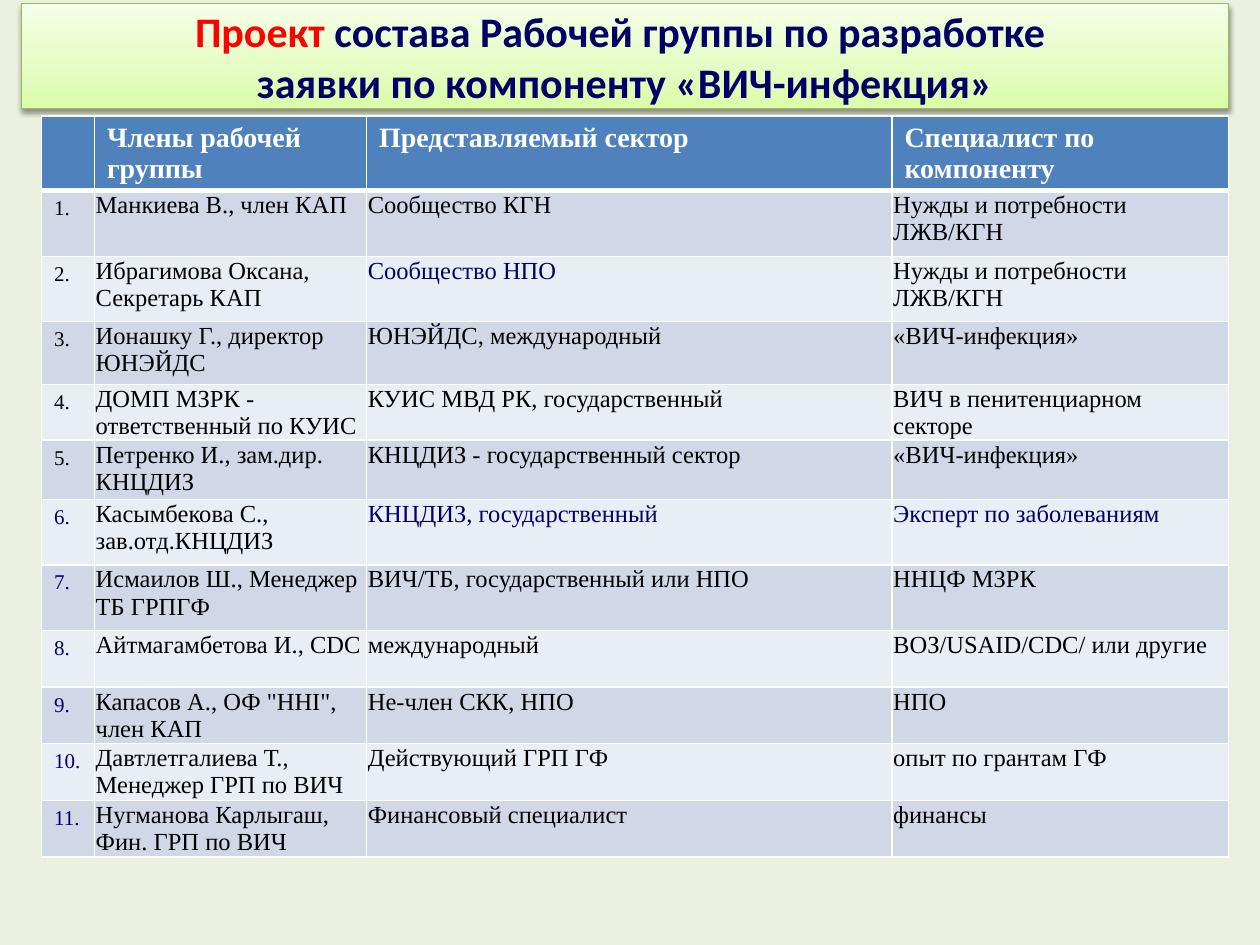
from dataclasses import dataclass

from lxml import etree
from pptx import Presentation, util as u
from pptx.dml.color import RGBColor
from pptx.enum import text
from pptx.oxml import parse_xml


@dataclass(frozen=True)
class Theme:
    heading_font: str = "Calibri"
    body_font: str = "Times New Roman"
    title_size: int = 24
    header_size: int = 16
    body_size: int = 14
    number_size: int = 12
    page: str = "EBF1DE"
    navy: str = "000066"
    red: str = "FF0000"
    black: str = "000000"
    white: str = "FFFFFF"
    header_fill: str = "4F81BD"
    bands: tuple = ("D0D8E8", "E9EDF4")
    title_line: str = "98B955"
    title_stops: tuple = ((0, "DAFDA7"), (35, "E4FCC2"), (100, "F5FFE7"))


THEME = Theme()
DRAWING = "http://schemas.openxmlformats.org/drawingml/2006/main"

TITLE_LINES = [
    [("Проект", THEME.red), (" состава Рабочей группы по разработке ", THEME.navy)],
    [("заявки по компоненту «ВИЧ-инфекция»", THEME.navy)],
]
HEADERS = ["", "Члены рабочей группы", "Представляемый сектор", "Специалист по компоненту"]
MEMBERS = [
    ("Манкиева В., член КАП", "Сообщество КГН", "Нужды и потребности ЛЖВ/КГН"),
    ("Ибрагимова Оксана, Секретарь КАП", "Сообщество НПО", "Нужды и потребности ЛЖВ/КГН"),
    ("Ионашку Г., директор ЮНЭЙДС", "ЮНЭЙДС, международный", "«ВИЧ-инфекция»"),
    ("ДОМП МЗРК - ответственный по КУИС", "КУИС МВД РК, государственный",
     "ВИЧ в пенитенциарном секторе"),
    ("Петренко И., зам.дир. КНЦДИЗ", "КНЦДИЗ - государственный сектор", "«ВИЧ-инфекция»"),
    ("Касымбекова С., зав.отд.КНЦДИЗ", "КНЦДИЗ, государственный", "Эксперт по заболеваниям"),
    ("Исмаилов Ш., Менеджер ТБ ГРПГФ", "ВИЧ/ТБ, государственный или НПО", "ННЦФ МЗРК"),
    ("Айтмагамбетова И., CDC", "международный", "ВОЗ/USAID/CDC/ или другие"),
    ("Капасов А., ОФ \"HHI\", член КАП", "Не-член СКК, НПО", "НПО"),
    ("Давтлетгалиева Т., Менеджер ГРП по ВИЧ", "Действующий ГРП ГФ", "опыт по грантам ГФ"),
    ("Нугманова Карлыгаш, Фин. ГРП по ВИЧ", "Финансовый специалист", "финансы"),
]
NAVY_CELLS = {(2, 2), (6, 2), (6, 3)} | {(row, 0) for row in range(6, len(MEMBERS) + 1)}

COLUMNS = [0.42, 2.16, 4.17, 2.67]
ROWS = [0.59, 0.52, 0.52, 0.5, 0.43, 0.47, 0.52, 0.52] + [0.45] * 4
TITLE_BOX = (0.17, 0.03, 9.58, 0.83)
TABLE_CORNER = (0.33, 0.92)
WIDE_INSETS = (0.1, 0.05, 0.1, 0.05)
TIGHT_INSETS = (0.01, 0.01, 0.01, 0)


def write(paragraph, words, *, size, color, font=THEME.body_font, bold=False):
    run = paragraph.add_run()
    run.text = words
    run.font.name = font
    run.font.size = u.Pt(size)
    run.font.bold = bold
    run.font.color.rgb = RGBColor.from_string(color)


def add_title(slide):
    title = slide.shapes.title
    title.left, title.top, title.width, title.height = map(u.Inches, TITLE_BOX)
    stops = "".join(
        f'<a:gs pos="{share * 1000}"><a:srgbClr val="{color}"/></a:gs>'
        for share, color in THEME.title_stops
    )
    properties = title.element.spPr
    properties.append(parse_xml(
        f'<a:gradFill xmlns:a="{DRAWING}" rotWithShape="1"><a:gsLst>{stops}</a:gsLst>'
        '<a:lin ang="16200000" scaled="0"/></a:gradFill>'))
    title.line.color.rgb = RGBColor.from_string(THEME.title_line)
    title.line.width = u.Pt(0.75)
    properties.append(parse_xml(
        f'<a:effectLst xmlns:a="{DRAWING}"><a:outerShdw blurRad="{u.Pt(3.1)}" '
        f'dist="{u.Pt(1.6)}" dir="5400000" rotWithShape="0">'
        f'<a:srgbClr val="{THEME.black}"><a:alpha val="38000"/></a:srgbClr>'
        '</a:outerShdw></a:effectLst>'))
    frame = title.text_frame
    frame.word_wrap = True
    frame.auto_size = text.MSO_AUTO_SIZE.NONE
    frame.vertical_anchor = text.MSO_ANCHOR.MIDDLE
    paragraph = frame.paragraphs[0]
    paragraph.alignment = text.PP_ALIGN.CENTER
    for index, line in enumerate(TITLE_LINES):
        if index:
            paragraph.add_line_break()
        for words, color in line:
            write(paragraph, words, size=THEME.title_size, color=color,
                  font=THEME.heading_font, bold=True)


def set_borders(cell, **points):
    properties = cell._tc.get_or_add_tcPr()
    for side in "LRTB":
        border = etree.SubElement(properties, f"{{{DRAWING}}}ln{side}",
                                  w=str(u.Pt(points.get(side, 1))))
        fill = etree.SubElement(border, f"{{{DRAWING}}}solidFill")
        etree.SubElement(fill, f"{{{DRAWING}}}srgbClr", val=THEME.white)


def cell_format(row, column):
    if row == 0:
        return dict(size=THEME.header_size, color=THEME.white, bold=True)
    return dict(size=THEME.body_size if column else THEME.number_size,
                color=THEME.navy if (row, column) in NAVY_CELLS else THEME.black)


def add_members(slide):
    records = [HEADERS] + [(f"{n}.", *member) for n, member in enumerate(MEMBERS, 1)]
    extent = (*TABLE_CORNER, sum(COLUMNS), sum(ROWS))
    members = slide.shapes.add_table(len(ROWS), len(COLUMNS), *map(u.Inches, extent)).table
    for column, width in zip(members.columns, COLUMNS):
        column.width = u.Inches(width)
    for row, height in zip(members.rows, ROWS):
        row.height = u.Inches(height)
    for r, record in enumerate(records):
        for c, words in enumerate(record):
            cell = members.cell(r, c)
            insets = TIGHT_INSETS if r and c else WIDE_INSETS
            (cell.margin_left, cell.margin_top,
             cell.margin_right, cell.margin_bottom) = map(u.Inches, insets)
            set_borders(cell, T=3 if r == 1 else 1, B=3 if r == 0 else 1)
            cell.fill.solid()
            fill = THEME.bands[(r - 1) % 2] if r else THEME.header_fill
            cell.fill.fore_color.rgb = RGBColor.from_string(fill)
            if words:
                write(cell.text_frame.paragraphs[0], words, **cell_format(r, c))


def main():
    deck = Presentation()
    deck.slide_width, deck.slide_height = u.Inches(10), u.Inches(7.5)
    slide = deck.slides.add_slide(deck.slide_layouts[5])
    slide.background.fill.solid()
    slide.background.fill.fore_color.rgb = RGBColor.from_string(THEME.page)
    add_title(slide)
    add_members(slide)
    deck.save("out.pptx")


if __name__ == "__main__":
    main()
